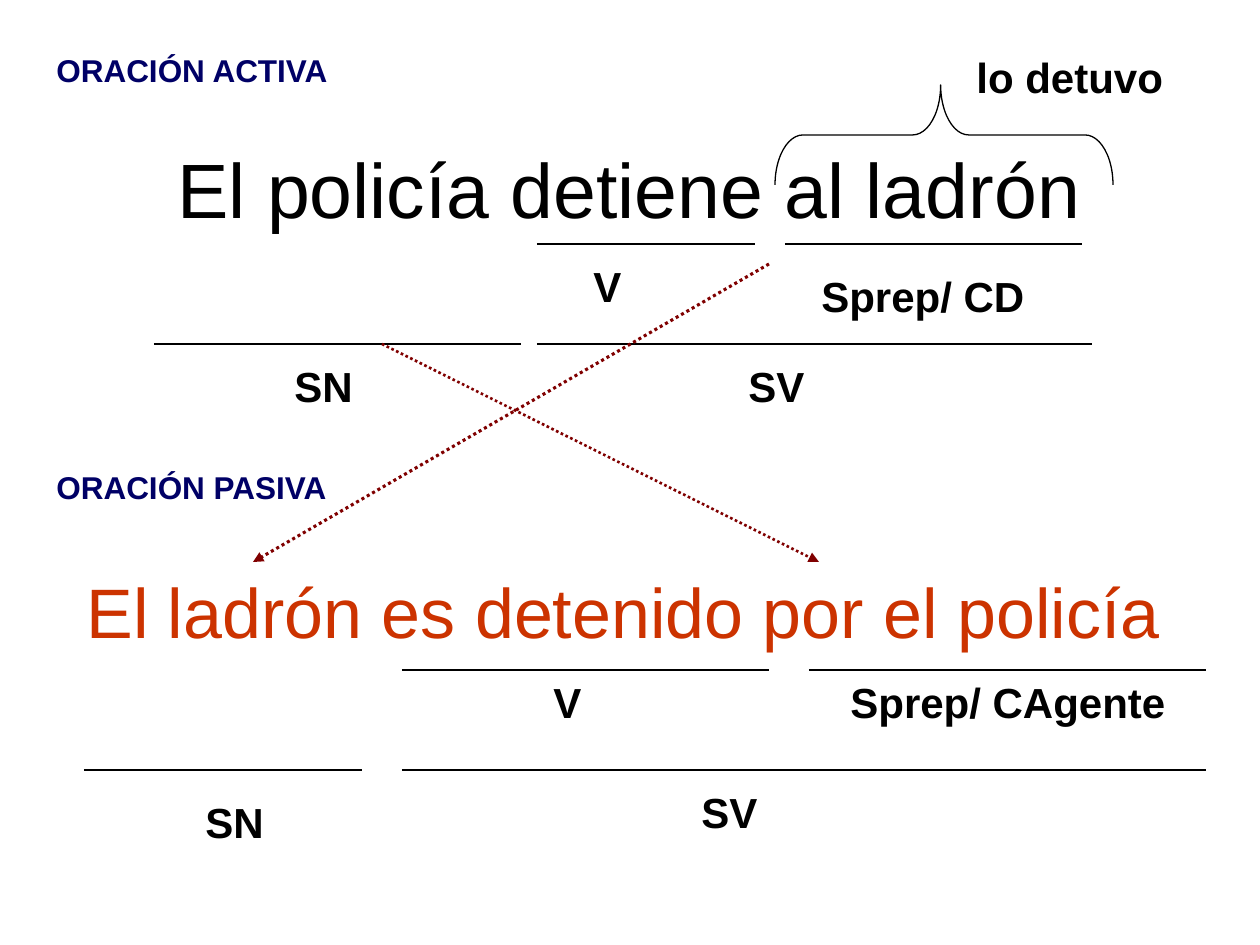
from lxml.etree import SubElement
from pptx import Presentation
from pptx.dml.color import RGBColor
from pptx.enum.dml import MSO_LINE
from pptx.enum.shapes import MSO_CONNECTOR, MSO_SHAPE
from pptx.enum.text import MSO_ANCHOR, PP_ALIGN
from pptx.oxml.ns import qn
from pptx.util import Pt

SCALE = 914400 / 126
COLORS = {"ink": "000000", "head": "000066", "passive": "CC3300", "arrow": "800000"}


def px(n):
    return round(n * SCALE)


def rgb(name):
    return RGBColor.from_string(COLORS[name])


def add_text(slide, text, left, top, width, height, size=24, color="ink",
             bold=True, wrap=True, align=PP_ALIGN.LEFT, anchor=MSO_ANCHOR.TOP):
    box = slide.shapes.add_textbox(px(left), px(top), px(width), px(height))
    frame = box.text_frame
    frame.word_wrap = wrap
    frame.vertical_anchor = anchor
    para = frame.paragraphs[0]
    para.alignment = align
    run = para.add_run()
    run.text = text
    font = run.font
    font.name, font.size, font.bold = "Arial", Pt(size), bold
    font.color.rgb = rgb(color)


def add_line(slide, x1, y1, x2, y2, color="ink", width=0.75):
    line = slide.shapes.add_connector(
        MSO_CONNECTOR.STRAIGHT, px(x1), px(y1), px(x2), px(y2))
    line.line.color.rgb = rgb(color)
    line.line.width = Pt(width)
    SubElement(line._element.spPr, qn("a:effectLst"))
    return line


def add_arrow(slide, x1, y1, x2, y2, width):
    """Dotted arrow from a phrase to its place in the passive sentence."""
    arrow = add_line(slide, x1, y1, x2, y2, "arrow", width)
    arrow.line.dash_style = MSO_LINE.ROUND_DOT
    SubElement(arrow.line._get_or_add_ln(), qn("a:tailEnd"), type="triangle")


def add_brace(slide, left, top, width, height):
    """Brace that opens downwards: a left brace turned about its centre."""
    shift = (width - height) / 2
    brace = slide.shapes.add_shape(
        MSO_SHAPE.LEFT_BRACE, px(left + shift), px(top - shift), px(height), px(width))
    brace.rotation = 90
    brace.adjustments[0], brace.adjustments[1] = 0.28, 0.51
    brace.shadow.inherit = False
    brace.fill.background()
    brace.line.color.rgb = rgb("ink")
    brace.line.width = Pt(0.75)


def main():
    deck = Presentation()
    deck.slide_width, deck.slide_height = px(1260), px(945)
    slide = deck.slides.add_slide(deck.slide_layouts[6])

    add_text(slide, "El policía detiene al ladrón", 94, 86, 1071, 203, 44,
             bold=False, align=PP_ALIGN.CENTER, anchor=MSO_ANCHOR.MIDDLE)
    add_text(slide, "El ladrón es detenido por el policía", 74, 562, 1100, 97, 40,
             "passive", bold=False, wrap=False)
    for text, top in (("ORACIÓN ACTIVA", 45), ("ORACIÓN PASIVA", 462)):
        add_text(slide, text, 44, top, 377, 50, 18, "head")

    rules = (
        (537, 755, 244), (785, 1082, 244), (154, 521, 344), (537, 1092, 344),
        (402, 769, 670), (809, 1206, 670), (84, 362, 770), (402, 1206, 770),
    )
    for start, end, y in rules:
        add_line(slide, start, y, end, y)

    labels = (
        ("lo detuvo", 964, 45, 248),
        ("V", 581, 254, 69), ("Sprep/ CD", 809, 264, 248),
        ("SN", 282, 354, 89), ("SV", 736, 354, 89),
        ("V", 541, 670, 69), ("Sprep/ CAgente", 838, 670, 348),
        ("SN", 193, 790, 89), ("SV", 689, 780, 89),
    )
    for text, left, top, width in labels:
        add_text(slide, text, left, top, width, 63)

    add_brace(slide, 775, 85, 338, 100)
    add_arrow(slide, 769, 264, 253, 562, 1.75)
    add_arrow(slide, 382, 344, 819, 562, 1.5)
    deck.save("out.pptx")


if __name__ == "__main__":
    main()
